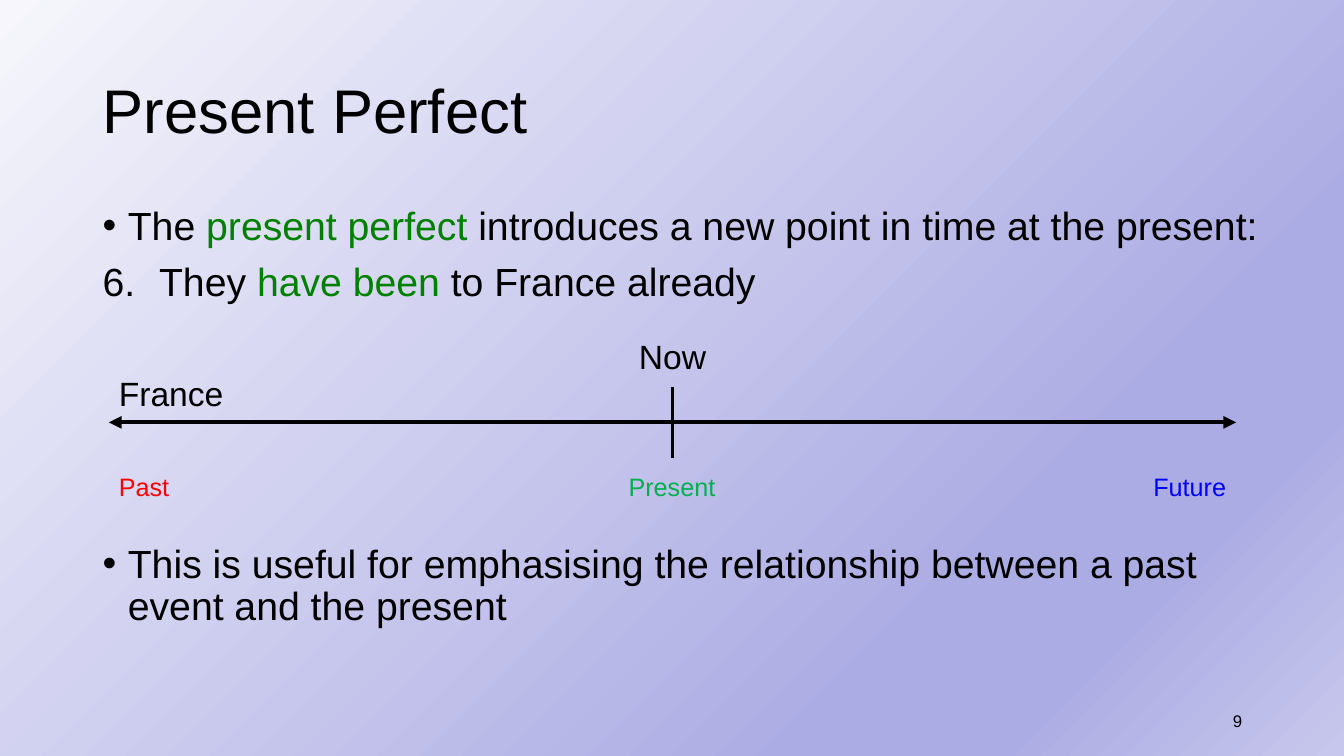
from copy import deepcopy

from lxml.etree import SubElement
from pptx import Presentation
from pptx.dml.color import RGBColor
from pptx.enum.shapes import MSO_CONNECTOR
from pptx.enum.text import MSO_ANCHOR, MSO_AUTO_SIZE, PP_ALIGN
from pptx.oxml.ns import qn
from pptx.util import Inches, Pt

WIDTH, HEIGHT = 13.33, 7.5
MARGIN = 0.92
FONT = "Arial"
BLACK, GREEN = "000000", "008000"
BACKGROUND = [(0, "F6F6FC"), (74, "ACACE4"), (83, "ACACE4"), (100, "C7C7ED")]


def color(value):
    return RGBColor.from_string(value)


def style(font, size, value=BLACK):
    font.name, font.size = FONT, Pt(size)
    font.color.rgb = color(value)


def paint_background(page):
    fill = page.background.fill
    fill.gradient()
    fill.gradient_angle = 315  # counter-clockwise: towards the lower right
    stops = page.background._cSld.find(".//" + qn("a:gsLst"))
    for _ in BACKGROUND[2:]:
        stops.append(deepcopy(stops[0]))
    for stop, (share, value) in zip(fill.gradient_stops, BACKGROUND):
        stop.position = share / 100
        stop.color.rgb = color(value)


def add_title(page, text, left, top, width, height):
    title = page.shapes.title
    title.left, title.top = Inches(left), Inches(top)
    title.width, title.height = Inches(width), Inches(height)
    frame = title.text_frame
    frame.text = text
    frame.auto_size = MSO_AUTO_SIZE.NONE
    frame.vertical_anchor = MSO_ANCHOR.MIDDLE
    para = frame.paragraphs[0]
    para.alignment, para.line_spacing = PP_ALIGN.LEFT, 0.9
    style(para.font, 44)


def add_label(page, text, size, value, left, top, width, height, align=PP_ALIGN.LEFT):
    box = page.shapes.add_textbox(*map(Inches, (left, top, width, height)))
    frame = box.text_frame
    frame.vertical_anchor = MSO_ANCHOR.MIDDLE
    para = frame.paragraphs[0]
    para.text, para.alignment = text, align
    style(para.font, size, value)


def add_list(page, items, left, top, width, height):
    """Each item is a starting number (None for a bullet) and its coloured spans."""
    box = page.shapes.add_textbox(*map(Inches, (left, top, width, height)))
    frame = box.text_frame
    frame.word_wrap = True
    for index, (number, spans) in enumerate(items):
        para = frame.add_paragraph() if index else frame.paragraphs[0]
        para.line_spacing, para.space_before = 0.9, Pt(10)
        indent = Inches(0.56 if number else 0.25)
        properties = para._p.get_or_add_pPr()
        properties.set("marL", str(indent))
        properties.set("indent", str(-indent))
        SubElement(properties, qn("a:buFont"), typeface=FONT)
        if number:
            SubElement(properties, qn("a:buAutoNum"), type="arabicPeriod", startAt=str(number))
        else:
            SubElement(properties, qn("a:buChar"), char="•")
        for text, value in spans:
            span = para.add_run()
            span.text = text
            style(span.font, 28, value)


def add_line(page, start, end, weight, arrows=False):
    line = page.shapes.add_connector(MSO_CONNECTOR.STRAIGHT, *map(Inches, start + end))
    line.line.color.rgb = color(BLACK)
    line.line.width = Pt(weight)
    if arrows:
        outline = line.line._get_or_add_ln()
        for tag in ("a:headEnd", "a:tailEnd"):
            SubElement(outline, qn(tag), type="triangle")
    SubElement(line._element.spPr, qn("a:effectLst"))


def add_timeline(page, left, top, width, height):
    """Draw the axis with its events above and the three times below."""
    right, middle = left + width, left + width / 2
    axis = top + 0.91
    tick = 0.35
    add_line(page, (left, axis), (right, axis), 3, arrows=True)
    add_line(page, (middle, axis - tick), (middle, axis + tick), 2)

    label_height = 0.4
    label_top = top + height - label_height
    add_label(page, "Past", 18, "FF0000", left, label_top, 0.71, label_height)
    add_label(page, "Present", 18, "00B050", middle - 0.54, label_top, 1.07,
              label_height, PP_ALIGN.CENTER)
    add_label(page, "Future", 18, "0000FF", right - 0.93, label_top, 0.93,
              label_height, PP_ALIGN.RIGHT)

    add_label(page, "France", 24, BLACK, left, axis - 0.54, 1.25, 0.5)
    add_label(page, "Now", 24, BLACK, middle - 0.44, top, 0.88, 0.5, PP_ALIGN.CENTER)


def main():
    deck = Presentation()
    deck.slide_width, deck.slide_height = Inches(WIDTH), Inches(HEIGHT)
    page = deck.slides.add_slide(deck.slide_layouts[5])
    paint_background(page)

    add_title(page, "Present Perfect", MARGIN, 0.4, 11.5, 1.45)
    add_list(page, [
        (None, [("The ", BLACK), ("present perfect ", GREEN),
                ("introduces a new point in time at the present:", BLACK)]),
        (6, [("They ", BLACK), ("have been ", GREEN), ("to France already", BLACK)]),
    ], MARGIN, 2, 11.77, 1.2)
    add_timeline(page, 1.08, 3.28, 11.18, 1.75)
    add_list(page, [
        (None, [("This is useful for emphasising the relationship between "
                 "a past event and the present", BLACK)]),
    ], MARGIN, 5.35, 11.77, 1.2)
    add_label(page, "9", 12, BLACK, 9.42, 6.95, 3, 0.4, PP_ALIGN.RIGHT)
    deck.save("out.pptx")


if __name__ == "__main__":
    main()
